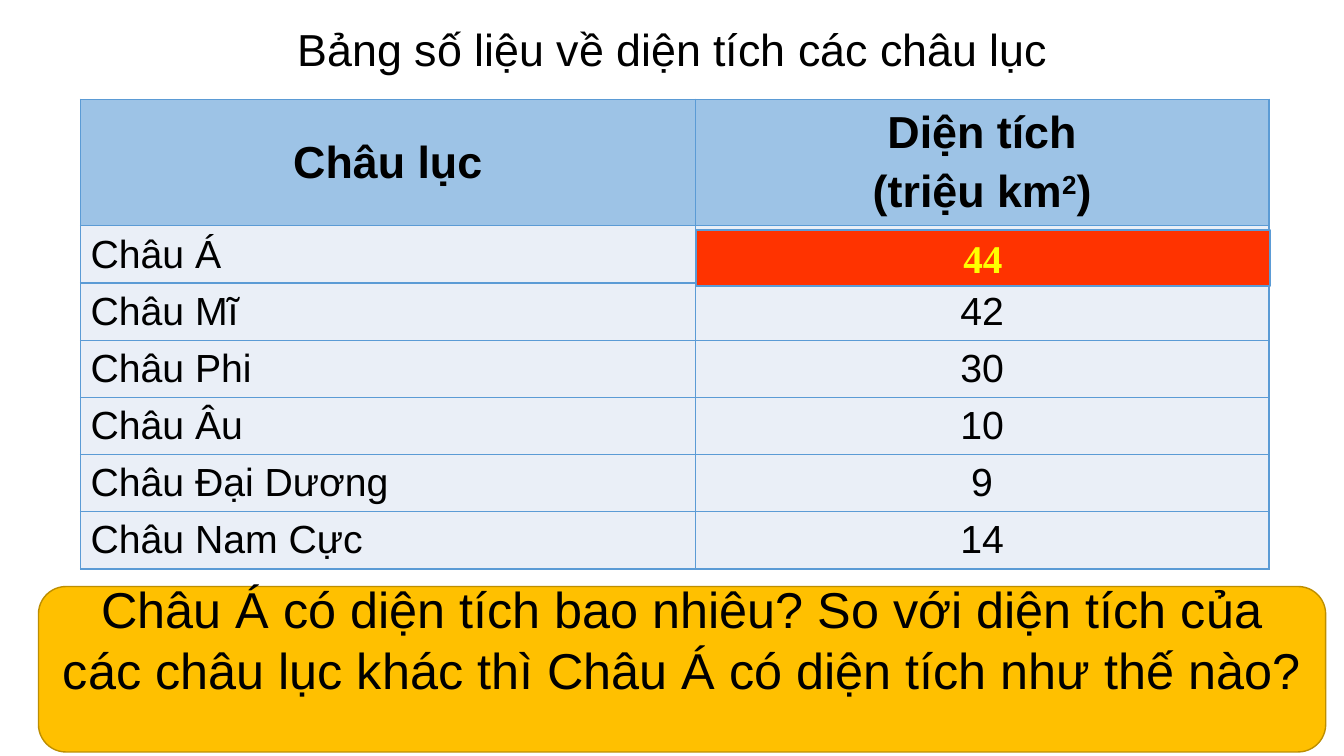
from lxml import etree
from pptx import Presentation
from pptx import util as u
from pptx.dml import color as dml
from pptx.enum import shapes, text
from pptx.oxml import ns

COLORS = {
    "black": "000000", "yellow": "FFFF00", "red": "FF3300", "amber": "FFC000",
    "brown": "BD8E00", "blue": "5B9BD5", "header": "9DC3E6", "body": "EAEFF7",
}
AREAS = [
    ("Châu Á", "44"), ("Châu Mĩ", "42"), ("Châu Phi", "30"),
    ("Châu Âu", "10"), ("Châu Đại Dương", "9"), ("Châu Nam Cực", "14"),
]
HEADER = {"name": "Arial", "size": u.Pt(32), "bold": True}
BODY = {"name": "Arial", "size": u.Pt(28), "bold": False}
TITLE = {"name": "Arial", "size": u.Pt(32)}
ANSWER = {"name": "Times New Roman", "size": u.Pt(28), "bold": True}
QUESTION = {"name": "Arial", "size": u.Pt(36)}
CENTER = text.PP_ALIGN.CENTER
LEFT = text.PP_ALIGN.LEFT


def rgb(name):
    """Return the named colour."""
    return dml.RGBColor.from_string(COLORS[name])


def add_run(paragraph, words, font_format, color="black"):
    """Append formatted words to a paragraph and return the run."""
    run = paragraph.add_run()
    run.text = words
    for attribute, value in font_format.items():
        setattr(run.font, attribute, value)
    run.font.color.rgb = rgb(color)
    return run


def add_borders(cell):
    """Outline a table cell in blue."""
    properties = cell._tc.get_or_add_tcPr()
    for index, side in enumerate(("lnL", "lnR", "lnT", "lnB")):
        line = etree.Element(ns.qn(f"a:{side}"), w=str(u.Pt(1)))
        fill = etree.SubElement(line, ns.qn("a:solidFill"))
        etree.SubElement(fill, ns.qn("a:srgbClr"), val=COLORS["blue"])
        properties.insert(index, line)


def style_cell(cell, fill):
    """Fill and outline a cell and return its first paragraph."""
    cell.fill.solid()
    cell.fill.fore_color.rgb = rgb(fill)
    cell.vertical_anchor = text.MSO_ANCHOR.MIDDLE
    add_borders(cell)
    return cell.text_frame.paragraphs[0]


def add_title(slide, left, top, width, height):
    """Place the slide title in its box."""
    frame = slide.shapes.add_textbox(left, top, width, height).text_frame
    frame.word_wrap = True
    frame.vertical_anchor = text.MSO_ANCHOR.MIDDLE
    paragraph = frame.paragraphs[0]
    paragraph.line_spacing = 0.9
    add_run(paragraph, "Bảng số liệu về diện tích các châu lục", TITLE)


def add_area_table(slide, left, top, width, height):
    """Place the table of continents and their areas."""
    table = slide.shapes.add_table(len(AREAS) + 1, 2, left, top, width, height).table
    table.columns[0].width = u.Cm(15.49)
    table.columns[1].width = width - table.columns[0].width
    table.rows[0].height = u.Cm(3.12)
    for row in list(table.rows)[1:]:
        row.height = (height - table.rows[0].height) // len(AREAS)

    continent, area = (style_cell(table.cell(0, column), "header") for column in range(2))
    add_run(continent, "Châu lục", HEADER)
    add_run(area, "Diện tích", HEADER)
    unit = table.cell(0, 1).text_frame.add_paragraph()
    unit.space_before = u.Pt(6.4)
    add_run(unit, "(triệu km", HEADER)
    add_run(unit, "2", HEADER).font._element.set("baseline", "30000")
    add_run(unit, ")", HEADER)
    for paragraph in (continent, area, unit):
        paragraph.alignment = CENTER

    for row, values in enumerate(AREAS, 1):
        for column, (value, alignment) in enumerate(zip(values, (LEFT, CENTER))):
            paragraph = style_cell(table.cell(row, column), "body")
            paragraph.alignment = alignment
            add_run(paragraph, value, BODY)


def add_panel(slide, kind, box, colors, line_width, words, font_format):
    """Place a filled shape with centred text in the given box."""
    fill, line, font = colors
    shape = slide.shapes.add_shape(kind, *box)
    shape.shadow.inherit = False
    shape.fill.solid()
    shape.fill.fore_color.rgb = rgb(fill)
    shape.line.color.rgb = rgb(line)
    shape.line.width = u.Pt(line_width)
    frame = shape.text_frame
    frame.word_wrap = True
    frame.vertical_anchor = text.MSO_ANCHOR.MIDDLE
    frame.paragraphs[0].alignment = CENTER
    add_run(frame.paragraphs[0], words, font_format, font)
    return shape


def main():
    """Build and save the slide."""
    presentation = Presentation()
    presentation.slide_width = u.Cm(33.87)
    presentation.slide_height = u.Cm(19.05)
    slide = presentation.slides.add_slide(presentation.slide_layouts[6])
    add_title(slide, u.Cm(7.26), u.Cm(0.15), u.Cm(21.46), u.Cm(2.34))
    add_area_table(slide, u.Cm(2.03), u.Cm(2.5), u.Cm(29.95), u.Cm(11.6))
    add_panel(
        slide, shapes.MSO_SHAPE.RECTANGLE,
        (u.Cm(17.53), u.Cm(5.8), u.Cm(14.48), u.Cm(1.4)),
        ("red", "blue", "yellow"), 1.5, "44", ANSWER,
    )
    question = add_panel(
        slide, shapes.MSO_SHAPE.ROUNDED_RECTANGLE,
        (u.Cm(0.97), u.Cm(14.78), u.Cm(32.44), u.Cm(4.17)),
        ("amber", "brown", "black"), 1,
        "Châu Á có diện tích bao nhiêu? So với diện tích của các châu lục khác "
        "thì Châu Á có diện tích như thế nào?", QUESTION,
    )
    question.text_frame.margin_bottom = u.Cm(1.65)
    presentation.save("out.pptx")


if __name__ == "__main__":
    main()
